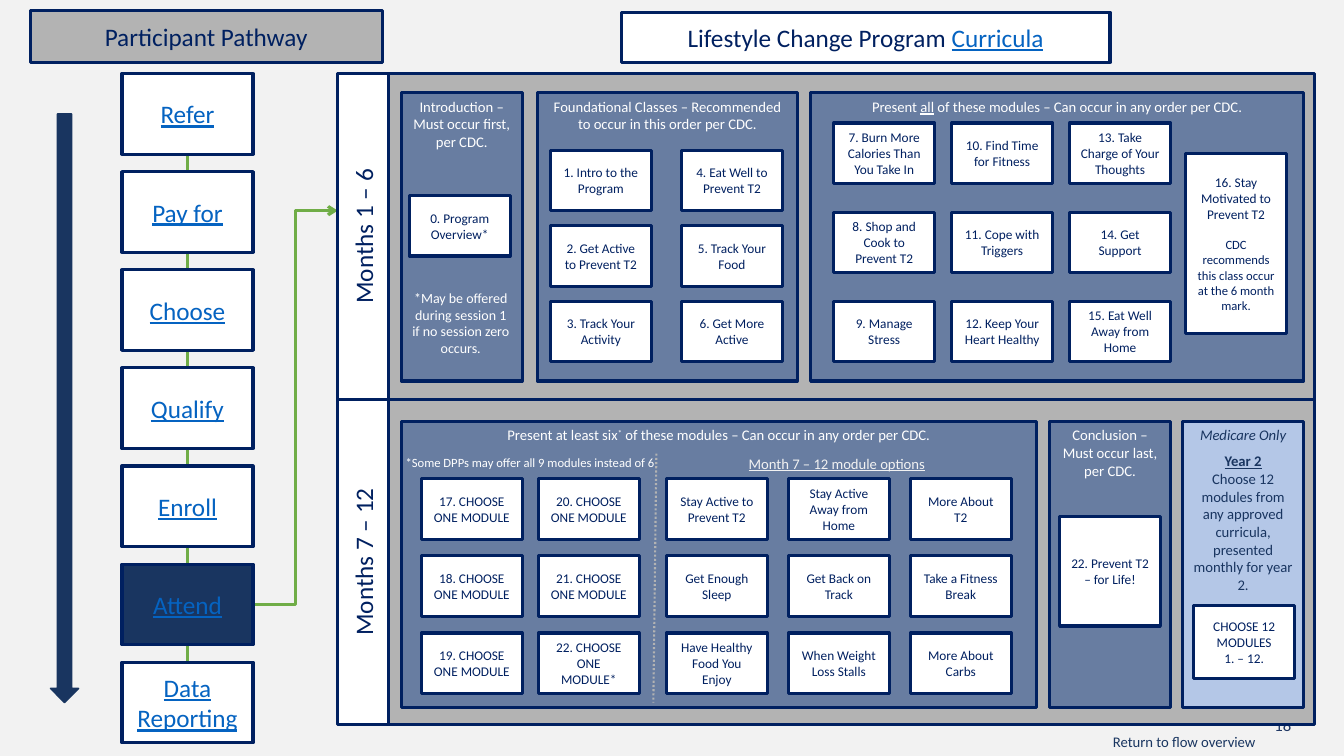
from lxml import etree
from pptx import Presentation
from pptx.dml.color import RGBColor
from pptx.enum import dml, shapes, text
from pptx.oxml import ns
from pptx.util import Inches, Pt

NAVY = RGBColor(0x00, 0x20, 0x60)
DEEP = RGBColor(0x19, 0x35, 0x60)
SLATE = RGBColor(0x68, 0x7D, 0xA1)
SKY = RGBColor(0xB4, 0xC7, 0xE7)
GREY = RGBColor(0xB3, 0xB3, 0xB3)
PALE = RGBColor(0xF2, 0xF2, 0xF2)
WHITE = RGBColor(0xFF, 0xFF, 0xFF)
GREEN = RGBColor(0x70, 0xAD, 0x47)
LINK = RGBColor(0x05, 0x63, 0xC1)
NUMBER = RGBColor(0x20, 0x38, 0x64)
MIDDLE, TOP = text.MSO_ANCHOR.MIDDLE, text.MSO_ANCHOR.TOP
CENTER, LEFT = text.PP_ALIGN.CENTER, text.PP_ALIGN.LEFT


def write(shape, *paras, size=9.5, color=NAVY, align=CENTER, anchor=MIDDLE,
          wrap=True, underline=False, gaps=()):
    """Each paragraph is a string or a list of (text, format overrides) spans."""
    frame = shape.text_frame
    frame.word_wrap, frame.vertical_anchor = wrap, anchor
    frame.auto_size = text.MSO_AUTO_SIZE.NONE
    for index, spans in enumerate(paras):
        para = frame.paragraphs[0] if index == 0 else frame.add_paragraph()
        para.alignment = align
        para.space_before = Pt(gaps[index] if gaps else 0)
        for words, style in [(spans, {})] if isinstance(spans, str) else spans:
            span = para.add_run()
            span.text = words
            font = span.font
            font.name = "Calibri"
            font.size = Pt(style.get("size", size))
            font.color.rgb = style.get("color", color)
            font.underline = style.get("underline", underline)
            font.bold = style.get("bold", False)
            font.italic = style.get("italic", False)
            if style.get("raised"):
                font._element.set("baseline", "30000")


def paint(shape, fill, line=NAVY, width=2.25):
    shape.fill.solid()
    shape.fill.fore_color.rgb = fill
    shape.line.color.rgb = line
    shape.line.width = Pt(width)


def add_box(page, box, *paras, fill=WHITE, **style):
    shape = page.shapes.add_shape(shapes.MSO_SHAPE.RECTANGLE, *map(Inches, box))
    shape.shadow.inherit = False
    paint(shape, fill)
    write(shape, *paras, **style)
    return shape


def add_panel(page, box, *paras, fill=SLATE, color=WHITE, **style):
    return add_box(page, box, *paras, fill=fill, size=10.5, color=color, anchor=TOP, **style)


def add_note(page, box, words, **style):
    write(page.shapes.add_textbox(*map(Inches, box)), words, anchor=TOP, **style)


def add_line(page, start, end, color, width=2.25, kind=shapes.MSO_CONNECTOR.STRAIGHT):
    line = page.shapes.add_connector(kind, *map(Inches, start + end))
    line.line.color.rgb = color
    line.line.width = Pt(width)
    etree.SubElement(line._element.spPr, ns.qn("a:effectLst"))
    return line


def add_grid(page, first, last, columns):
    """Spread module boxes evenly between the first and last top left corners."""
    for c, column in enumerate(columns):
        left = first[0] + (last[0] - first[0]) * c / (len(columns) - 1)
        for r, module in enumerate(column):
            top = first[1] + (last[1] - first[1]) * r / (len(column) - 1)
            add_box(page, (left, top, 1, 0.6), module)


def headings(page):
    add_box(page, (0.3, 0.1, 3.49, 0.52), "Participant Pathway", fill=GREY, size=18)
    title = page.shapes.title
    title.left, title.top, title.width, title.height = map(Inches, (6.16, 0.12, 4.85, 0.5))
    paint(title, WHITE)
    write(title, [("Lifestyle Change Program ", {}),
                  ("Curricula", {"color": LINK, "underline": True})], size=18)


def pathway(page, box):
    left, top, width, height = box
    arrow = page.shapes.add_shape(shapes.MSO_SHAPE.DOWN_ARROW, Inches(left), Inches(top + 0.4),
                                  Inches(0.28), Inches(5.84))
    arrow.shadow.inherit = False
    paint(arrow, DEEP, DEEP, 1)
    spine = add_line(page, (left, top), (left, top + height), GREEN)
    route = add_line(page, (left + width, 6), (3.35, 2.09), GREEN,
                     kind=shapes.MSO_CONNECTOR.ELBOW)
    etree.SubElement(route.line._get_or_add_ln(), ns.qn("a:tailEnd"), type="arrow")

    names = ["Refer", "Pay for", "Choose", "Qualify", "Enroll", "Attend", "Data Reporting"]
    pitch = (height - 0.8) / (len(names) - 1)
    steps = {}
    for index, name in enumerate(names):
        steps[name] = add_box(page, (left + width - 1.3, top + index * pitch, 1.3, 0.8), name,
                              fill=DEEP if name == "Attend" else WHITE,
                              size=18, color=LINK, underline=True)
    spine.begin_connect(steps["Refer"], 2)
    spine.end_connect(steps["Data Reporting"], 0)
    route.begin_connect(steps["Attend"], 3)


def band(page, box, label):
    left, top, width, height = box
    tab = add_box(page, (left - 0.25 - height / 2, top + height / 2 - 0.25, height, 0.5),
                  label, size=18)
    tab.rotation = 270
    add_box(page, box, fill=GREY)


def introduction(page, box):
    left, top, width, height = box
    add_panel(page, box, "Introduction – Must occur first, per CDC.")
    add_box(page, (left + 0.08, top + 1.02, 1, 0.6), "0. Program Overview*")
    add_note(page, (left + 0.01, top + 1.9, 1.16, 0.77),
             "*May be offered during session 1 if no session zero occurs.", size=10, color=WHITE)


def foundational(page, box):
    left, top, width, height = box
    add_panel(page, box, "Foundational Classes – Recommended to occur in this order per CDC.")
    add_grid(page, (left + 0.13, top + 0.57), (left + 1.43, top + 2.07), [
        ["1. Intro to the Program", "2. Get Active to Prevent T2", "3. Track Your Activity"],
        ["4. Eat Well to Prevent T2", "5. Track Your Food", "6. Get More Active"]])


def any_order(page, box):
    left, top, width, height = box
    add_panel(page, box, [("Present ", {}), ("all", {"underline": True}),
                          (" of these modules – Can occur in any order per CDC.", {})])
    add_grid(page, (left + 0.23, top + 0.3), (left + 2.57, top + 2.07), [
        ["7. Burn More Calories Than You Take In", "8. Shop and Cook to Prevent T2",
         "9. Manage Stress"],
        ["10. Find Time for Fitness", "11. Cope with Triggers", "12. Keep Your Heart Healthy"],
        ["13. Take Charge of Your Thoughts", "14. Get Support", "15. Eat Well Away from Home"]])
    add_box(page, (left + 3.72, top + 0.6, 1, 1.79), "16. Stay Motivated to Prevent T2",
            [("CDC recommends this class occur at the 6 month mark.", {"size": 9})],
            gaps=(0, 11))


def choose_six(page, box):
    left, top, width, height = box
    add_panel(page, box, [("Present at least six", {}), ("*", {"raised": True}),
                          (" of these modules – Can occur in any order per CDC.", {})])
    add_note(page, (left - 0.07, top + 0.28, 2.69, 0.25),
             "*Some DPPs may offer all 9 modules instead of 6", size=9, color=WHITE)
    add_note(page, (left + 3.33, top + 0.28, 1.98, 0.28), "Month 7 – 12 module options",
             size=10.5, color=PALE, underline=True, wrap=False)
    add_grid(page, (left + 0.2, top + 0.57), (left + 1.36, top + 2.1), [
        [f"{number}. CHOOSE ONE MODULE" for number in (17, 18, 19)],
        ["20. CHOOSE ONE MODULE", "21. CHOOSE ONE MODULE", "22. CHOOSE ONE MODULE*"]])
    add_grid(page, (left + 2.63, top + 0.57), (left + 5.05, top + 2.1), [
        ["Stay Active to Prevent T2", "Get Enough Sleep", "Have Healthy Food You Enjoy"],
        ["Stay Active Away from Home", "Get Back on Track", "When Weight Loss Stalls"],
        ["More About T2", "Take a Fitness Break", "More About Carbs"]])
    divider = add_line(page, (left + 2.53, top + 0.32), (left + 2.5, top + 2.79), GREY, 1.5)
    divider.line.dash_style = dml.MSO_LINE.ROUND_DOT


def conclusion(page, box):
    left, top, width, height = box
    add_panel(page, box, "Conclusion – Must occur last, per CDC.")
    add_box(page, (left + 0.1, top + 0.94, 1, 1.09), "22. Prevent T2 – for Life!")


def medicare(page, box):
    left, top, width, height = box
    add_panel(page, box, [("Medicare Only", {"italic": True})],
              [("Year 2", {"bold": True, "underline": True})],
              "Choose 12 modules from any approved curricula, presented monthly for year 2.",
              fill=SKY, color=DEEP, gaps=(0, 6, 0))
    add_box(page, (left + 0.11, top + 1.83, 1, 0.72), "CHOOSE 12 MODULES", "1. – 12.")


def main():
    deck = Presentation()
    deck.slide_width, deck.slide_height = Inches(13.33), Inches(7.5)
    page = deck.slides.add_slide(deck.slide_layouts[5])
    page.background.fill.solid()
    page.background.fill.fore_color.rgb = PALE

    add_note(page, (12.54, 7.04, 0.4, 0.3), "18", size=12, color=NUMBER, align=LEFT, wrap=False)
    add_note(page, (10.94, 7.22, 1.64, 0.28), "Return to flow overview", size=10.5, color=DEEP,
             align=LEFT, wrap=False)
    headings(page)
    pathway(page, (0.5, 0.73, 2.01, 6.64))
    band(page, (3.85, 3.96, 9.19, 3.23), "Months 7 – 12")
    band(page, (3.85, 0.73, 9.19, 3.23), "Months 1 – 6")
    introduction(page, (3.98, 0.92, 1.2, 2.86))
    foundational(page, (5.33, 0.92, 2.58, 2.86))
    any_order(page, (8.04, 0.92, 4.89, 2.86))
    choose_six(page, (3.98, 4.18, 6.3, 2.84))
    conclusion(page, (10.41, 4.18, 1.2, 2.84))
    medicare(page, (11.73, 4.18, 1.2, 2.84))
    deck.save("out.pptx")


if __name__ == "__main__":
    main()
